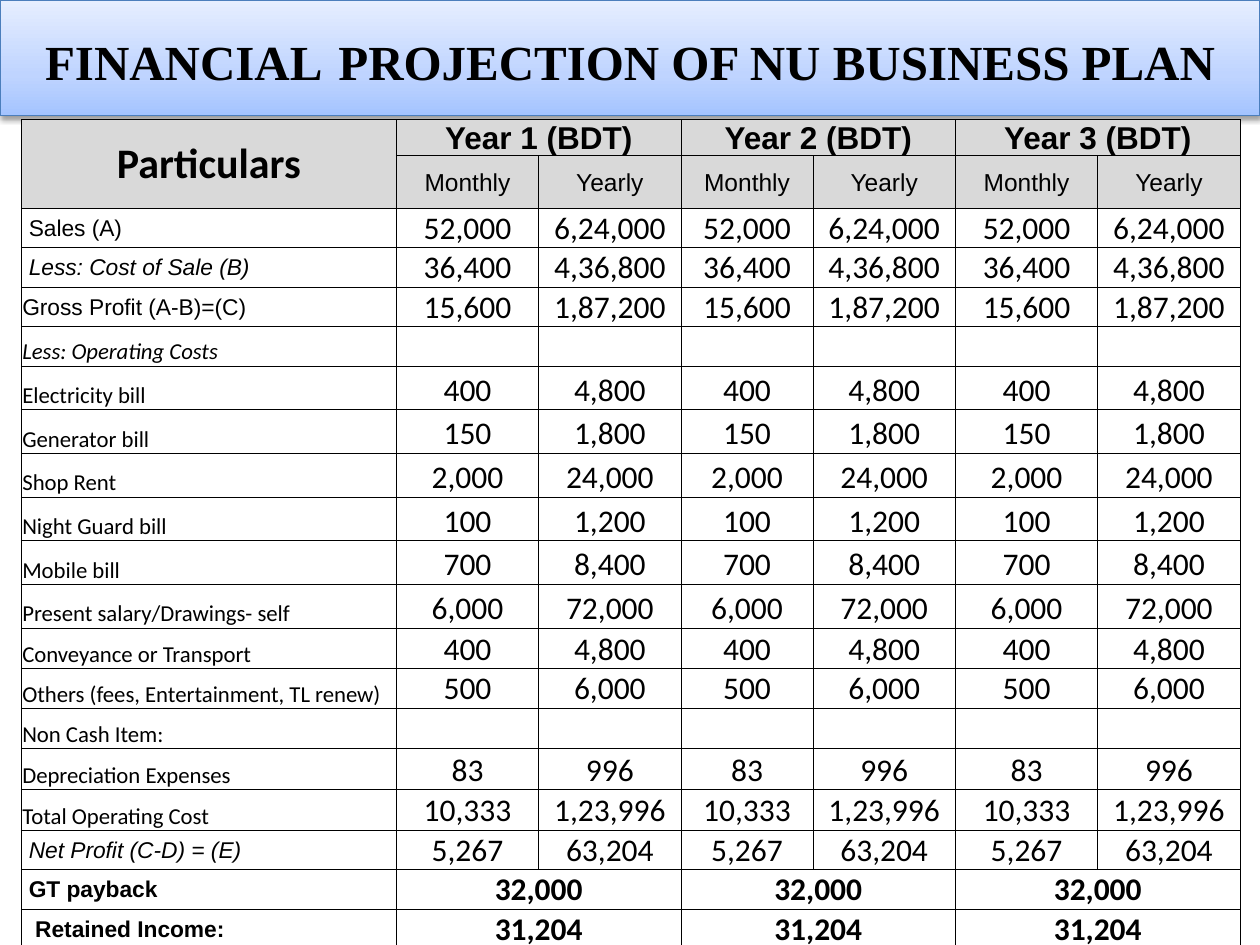
from dataclasses import dataclass

from lxml import etree
from pptx import Presentation
from pptx import util as u
from pptx.dml.color import RGBColor
from pptx.enum import shapes, text
from pptx.oxml import parse_xml
from pptx.oxml.ns import nsdecls, qn


@dataclass(frozen=True)
class Theme:
    ink: str = "000000"
    header_fill: str = "D9D9D9"
    banner_line: str = "4B7EBC"
    banner_stops: tuple = ((0, "A4C4FF"), (35, "BFD4FF"), (100, "E6EEFF"))
    title_font: str = "Times New Roman"
    gap_font: str = "TeX Gyre Schola"
    head_font: str = "Arial"
    body_font: str = "Calibri"
    title_size: int = 28
    gap_size: int = 32
    corner_size: int = 24
    figure_size: int = 18
    period_size: int = 14
    label_size: int = 13


THEME = Theme()
MIDDLE, BOTTOM = text.MSO_ANCHOR.MIDDLE, text.MSO_ANCHOR.BOTTOM
CENTER, LEFT = text.PP_ALIGN.CENTER, text.PP_ALIGN.LEFT

COLUMNS = [7.56, 2.87, 2.87, 2.66, 2.87, 2.87, 2.87]
HEADER_HEIGHTS = [0.66, 0.56]
YEARS = ["Year 1 (BDT)", "Year 2 (BDT)", "Year 3 (BDT)"]

# Summary rows are Arial and centred vertically, cost rows Calibri at the bottom.
SUMMARY = dict(font=THEME.head_font, anchor=MIDDLE)
COST = dict(font=THEME.body_font, anchor=BOTTOM)
INDENT = dict(SUMMARY, indent=0.13)

# Height in cm, label, figures repeated for each year, label format
ROWS = [
    (0.64, "Sales (A)", ["52,000", "6,24,000"], INDENT),
    (0.64, "Less: Cost of Sale (B)", ["36,400", "4,36,800"], dict(INDENT, italic=True)),
    (0.64, "Gross Profit (A-B)=(C)", ["15,600", "1,87,200"], SUMMARY),
    (0.64, "Less: Operating Costs", ["", ""], dict(COST, italic=True)),
    (0.88, "Electricity bill", ["400", "4,800"], COST),
    (0.88, "Generator bill", ["150", "1,800"], COST),
    (0.88, "Shop Rent", ["2,000", "24,000"], COST),
    (0.88, "Night Guard bill", ["100", "1,200"], COST),
    (0.88, "Mobile bill", ["700", "8,400"], COST),
    (0.88, "Present salary/Drawings- self", ["6,000", "72,000"], COST),
    (0.82, "Conveyance or Transport", ["400", "4,800"], COST),
    (0.59, "Others (fees, Entertainment, TL renew)", ["500", "6,000"], COST),
    (0.82, "Non Cash Item:", ["", ""], COST),
    (0.82, "Depreciation Expenses", ["83", "996"], COST),
    (0.82, "Total Operating Cost", ["10,333", "1,23,996"], COST),
    (0.64, "Net Profit (C-D) = (E)", ["5,267", "63,204"], dict(INDENT, italic=True)),
    (0.64, "GT payback", ["32,000"], dict(INDENT, bold=True)),
    (0.64, "Retained Income:", ["31,204"], dict(SUMMARY, indent=0.26, bold=True)),
]


def style_font(font, name, size, bold=False, italic=False):
    font.name, font.size = name, u.Pt(size)
    font.bold, font.italic = bold, italic
    font.color.rgb = RGBColor.from_string(THEME.ink)


def add_span(para, words, **style):
    span = para.add_run()
    span.text = words
    style_font(span.font, **style)


def add_borders(cell):
    props = cell._tc.get_or_add_tcPr()
    for position, side in enumerate(("lnL", "lnR", "lnT", "lnB")):
        props.insert(position, parse_xml(
            f'<a:{side} {nsdecls("a")} w="6350"><a:solidFill>'
            f'<a:srgbClr val="{THEME.ink}"/></a:solidFill></a:{side}>'))


def write_cell(cell, words, font=THEME.body_font, size=THEME.figure_size, bold=False,
               italic=False, align=CENTER, anchor=MIDDLE, indent=0, fill=None):
    cell.margin_left = u.Cm(0.02 + indent)
    cell.margin_right = cell.margin_top = u.Cm(0.02)
    cell.margin_bottom = 0
    cell.vertical_anchor = anchor
    if fill:
        cell.fill.solid()
        cell.fill.fore_color.rgb = RGBColor.from_string(fill)
    else:
        cell.fill.background()
    add_borders(cell)
    para = cell.text_frame.paragraphs[0]
    para.alignment = align
    if words:
        add_span(para, words, name=font, size=size, bold=bold, italic=italic)


def add_banner(page, left, top, width, height):
    box = page.shapes.add_shape(shapes.MSO_SHAPE.RECTANGLE, *map(u.Cm, (left, top, width, height)))
    box.line.color.rgb = RGBColor.from_string(THEME.banner_line)
    box.line.width = u.Pt(0.75)

    # Three-stop gradient running upwards, with a soft shadow below
    stops = "".join(f'<a:gs pos="{place * 1000}"><a:srgbClr val="{color}"/></a:gs>'
                    for place, color in THEME.banner_stops)
    props = box._element.spPr
    props.find(qn("a:prstGeom")).addnext(parse_xml(
        f'<a:gradFill {nsdecls("a")} rotWithShape="1"><a:gsLst>{stops}</a:gsLst>'
        '<a:lin ang="16200000" scaled="0"/></a:gradFill>'))
    box.shadow.inherit = False
    shadow = etree.SubElement(props.find(qn("a:effectLst")), qn("a:outerShdw"),
                              blurRad="39370", dist="20320", dir="5400000", rotWithShape="0")
    color = etree.SubElement(shadow, qn("a:srgbClr"), val=THEME.ink)
    etree.SubElement(color, qn("a:alpha"), val="38000")

    frame = box.text_frame
    frame.word_wrap = True
    frame.vertical_anchor = MIDDLE
    para = frame.paragraphs[0]
    para.alignment = CENTER
    title = dict(name=THEME.title_font, size=THEME.title_size, bold=True)
    add_span(para, "FINANCIAL", **title)
    add_span(para, " ", name=THEME.gap_font, size=THEME.gap_size, bold=True)
    add_span(para, "PROJECTION OF NU BUSINESS PLAN", **title)


def add_projection(page, left, top, width, height):
    heights = HEADER_HEIGHTS + [row[0] for row in ROWS]
    holder = page.shapes.add_table(len(heights), len(COLUMNS),
                                   *map(u.Cm, (left, top, width, height)))
    table = holder.table
    table.first_row = table.horz_banding = False
    for column, size in zip(table.columns, COLUMNS):
        column.width = u.Cm(size)
    for row, size in zip(table.rows, heights):
        row.height = u.Cm(size)
    holder.height = u.Cm(height)

    # Two header rows
    head = dict(font=THEME.head_font, fill=THEME.header_fill)
    table.cell(0, 0).merge(table.cell(1, 0))
    write_cell(table.cell(0, 0), "Particulars", size=THEME.corner_size, bold=True,
               fill=THEME.header_fill)
    write_cell(table.cell(1, 0), "", **head)
    for index, year in enumerate(YEARS):
        first = 1 + 2 * index
        table.cell(0, first).merge(table.cell(0, first + 1))
        write_cell(table.cell(0, first), year, bold=True, **head)
        write_cell(table.cell(0, first + 1), "", **head)
        for offset, period in enumerate(("Monthly", "Yearly")):
            write_cell(table.cell(1, first + offset), period, size=THEME.period_size, **head)

    # Labels and figures; a single figure spans both columns of its year
    for line, (_, label, figures, style) in enumerate(ROWS, start=len(HEADER_HEIGHTS)):
        write_cell(table.cell(line, 0), label, size=THEME.label_size, align=LEFT, **style)
        spanning = len(figures) == 1
        for first in range(1, len(COLUMNS), 2):
            if spanning:
                table.cell(line, first).merge(table.cell(line, first + 1))
            for offset, figure in enumerate(figures + [""] * spanning):
                write_cell(table.cell(line, first + offset), figure, bold=spanning,
                           anchor=style["anchor"])


def main():
    deck = Presentation()
    deck.slide_width, deck.slide_height = u.Cm(25.4), u.Cm(19.05)
    page = deck.slides.add_slide(deck.slide_layouts[6])
    add_banner(page, 0, 0, 25.4, 2.33)
    add_projection(page, 0.43, 2.41, 24.57, 16.23)
    deck.save("out.pptx")


if __name__ == "__main__":
    main()
